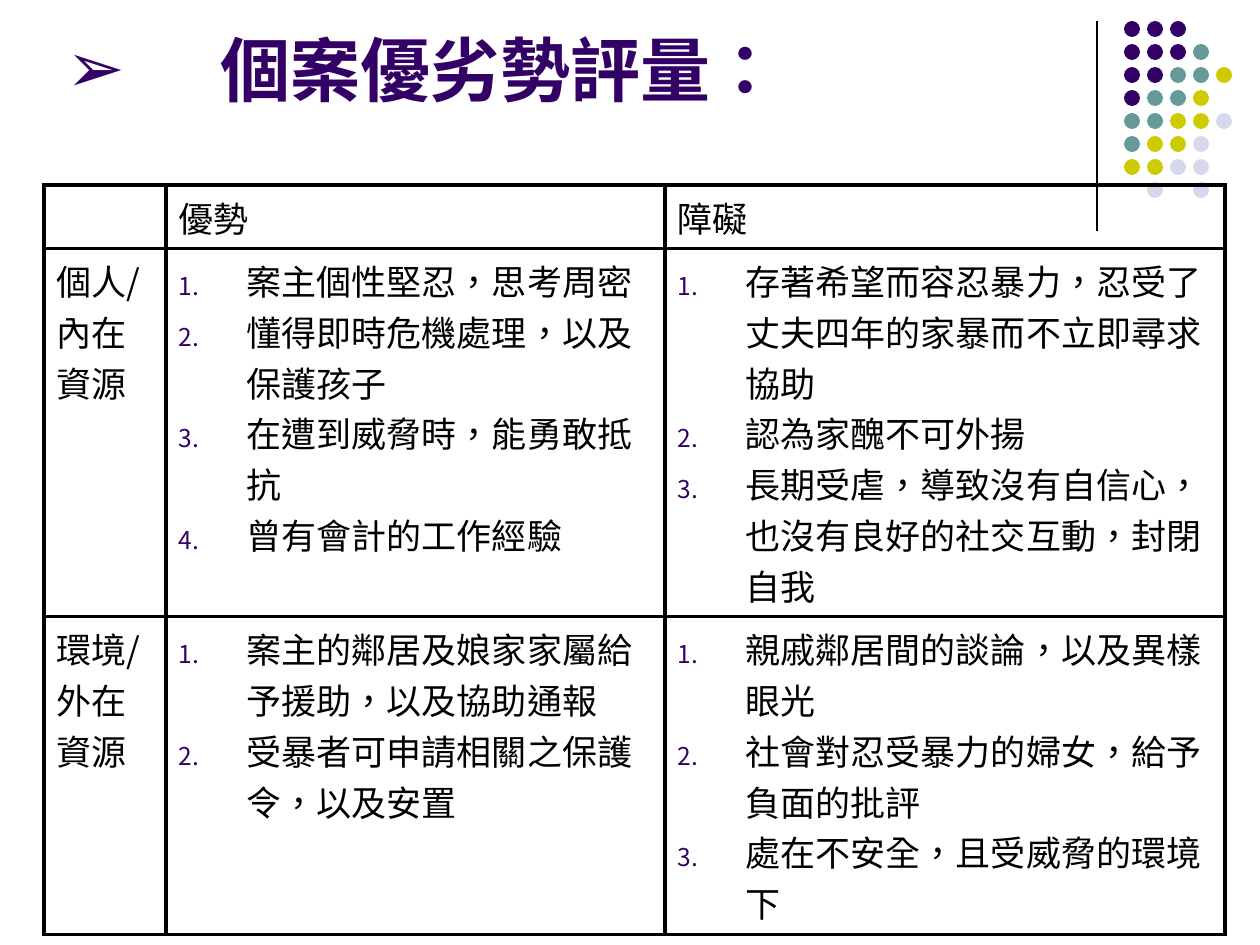
"""Build a slide with a table of a case's strengths and barriers."""
import pptx
import pptx.dml.color
import pptx.enum.lang
import pptx.enum.shapes
import pptx.enum.text
import pptx.oxml
import pptx.oxml.ns
import pptx.util

HUES = {"ink": "000000", "plum": "330066", "teal": "669999", "lime": "CCCC00", "mist": "D8D8EC"}
TITLE = "個案優劣勢評量："
ROWS = [
    ([], ["優勢"], ["障礙"]),
    (["個人/", "內在", "資源"],
     ["案主個性堅忍，思考周密", "懂得即時危機處理，以及保護孩子",
      "在遭到威脅時，能勇敢抵抗", "曾有會計的工作經驗"],
     ["存著希望而容忍暴力，忍受了丈夫四年的家暴而不立即尋求協助", "認為家醜不可外揚",
      "長期受虐，導致沒有自信心，也沒有良好的社交互動，封閉自我"]),
    (["環境/", "外在", "資源"],
     ["案主的鄰居及娘家家屬給予援助，以及協助通報", "受暴者可申請相關之保護令，以及安置"],
     ["親戚鄰居間的談論，以及異樣眼光", "社會對忍受暴力的婦女，給予負面的批評",
      "處在不安全，且受威脅的環境下"]),
]
WIDTHS = [122, 499, 560]
HEIGHTS = [63, 368, 318]
DOTS = ["PPP", "PPPT", "PPTTL", "PTTL", "TTLLM", "TLLM", "LLMM", " M M"]
KEYS = {"P": "plum", "T": "teal", "L": "lime", "M": "mist"}
LANG = pptx.enum.lang.MSO_LANGUAGE_ID.TRADITIONAL_CHINESE
HEAD = {"name": "Arial", "size": pptx.util.Pt(40), "bold": True, "language_id": LANG}
BODY = {"name": "Noto Sans CJK SC", "size": pptx.util.Pt(20), "bold": False, "language_id": LANG}
MARK = '<a:buFont {ns} typeface="Arial"/>', '<a:buChar {ns} char="➢"/>'
COUNT = ('<a:buClr {ns}><a:srgbClr val="' + HUES["plum"] + '"/></a:buClr>',
         '<a:buSzPct {ns} val="70000"/>', '<a:buAutoNum {ns} type="arabicPeriod"/>')
EDGE = ('<a:{tag} {ns} w="28575"><a:solidFill><a:srgbClr val="' + HUES["ink"]
        + '"/></a:solidFill></a:{tag}>')


def px(num):
    return round(num * 914400 / 126)


def hue(key):
    return pptx.dml.color.RGBColor.from_string(HUES[key])


def add_xml(node, *parts, **vals):
    for part in parts:
        text = part.format(ns=pptx.oxml.ns.nsdecls("a"), **vals)
        node.append(pptx.oxml.parse_xml(text))


def write(para, text, look, key, hang, marks=()):
    run = para.add_run()
    run.text = text
    run.font.color.rgb = hue(key)
    for name, val in look.items():
        setattr(run.font, name, val)
    add_xml(run.font._element, '<a:ea {ns} typeface="Noto Sans CJK SC"/>')
    para.alignment = pptx.enum.text.PP_ALIGN.LEFT
    props = para._p.get_or_add_pPr()
    props.set("marL", str(px(hang)))
    props.set("indent", str(px(-hang)))
    add_xml(props, *marks)


def add_title(slide):
    box = slide.shapes.title
    place = {"left": 54, "top": 0, "width": 1134, "height": 117}
    for name, val in place.items():
        setattr(box, name, px(val))
    frame = box.text_frame
    frame.auto_size = pptx.enum.text.MSO_AUTO_SIZE.NONE
    frame.vertical_anchor = pptx.enum.text.MSO_ANCHOR.BOTTOM
    write(frame.paragraphs[0], TITLE, HEAD, "plum", 154, MARK)


def add_dots(slide):
    rule = slide.shapes.add_connector(
        pptx.enum.shapes.MSO_CONNECTOR.STRAIGHT, px(1097), px(21), px(1097), px(231))
    rule.line.color.rgb = hue("ink")
    rule.line.width = pptx.util.Pt(0.75)
    add_xml(rule._element.spPr, "<a:effectLst {ns}/>")
    for row, line in enumerate(DOTS):
        for col, key in enumerate(line):
            if key in KEYS:
                dot = slide.shapes.add_shape(
                    pptx.enum.shapes.MSO_SHAPE.OVAL,
                    px(1124 + 23 * col), px(21 + 23 * row), px(16), px(16))
                dot.shadow.inherit = False
                dot.fill.solid()
                dot.fill.fore_color.rgb = hue(KEYS[key])
                dot.line.fill.background()


def add_grid(slide):
    grid = slide.shapes.add_table(
        len(ROWS), len(WIDTHS), px(44), px(185), px(sum(WIDTHS)), px(sum(HEIGHTS))).table
    grid.first_row = grid.horz_banding = False
    for col, size in zip(grid.columns, WIDTHS):
        col.width = px(size)
    for row, size in zip(grid.rows, HEIGHTS):
        row.height = px(size)
    for i, row in enumerate(ROWS):
        for j, items in enumerate(row):
            cell = grid.cell(i, j)
            props = cell._tc.get_or_add_tcPr()
            for tag in ("lnL", "lnR", "lnT", "lnB"):
                add_xml(props, EDGE, tag=tag)
            cell.fill.background()
            listed = i > 0 and j > 0
            frame = cell.text_frame
            for k, text in enumerate(items):
                para = frame.add_paragraph() if k else frame.paragraphs[0]
                write(para, text, BODY, "ink", 68 if listed else 48, COUNT if listed else ())


def main():
    deck = pptx.Presentation()
    deck.slide_width, deck.slide_height = px(1260), px(945)
    slide = deck.slides.add_slide(deck.slide_layouts[5])
    add_dots(slide)
    add_title(slide)
    add_grid(slide)
    deck.save("out.pptx")


if __name__ == "__main__":
    main()
